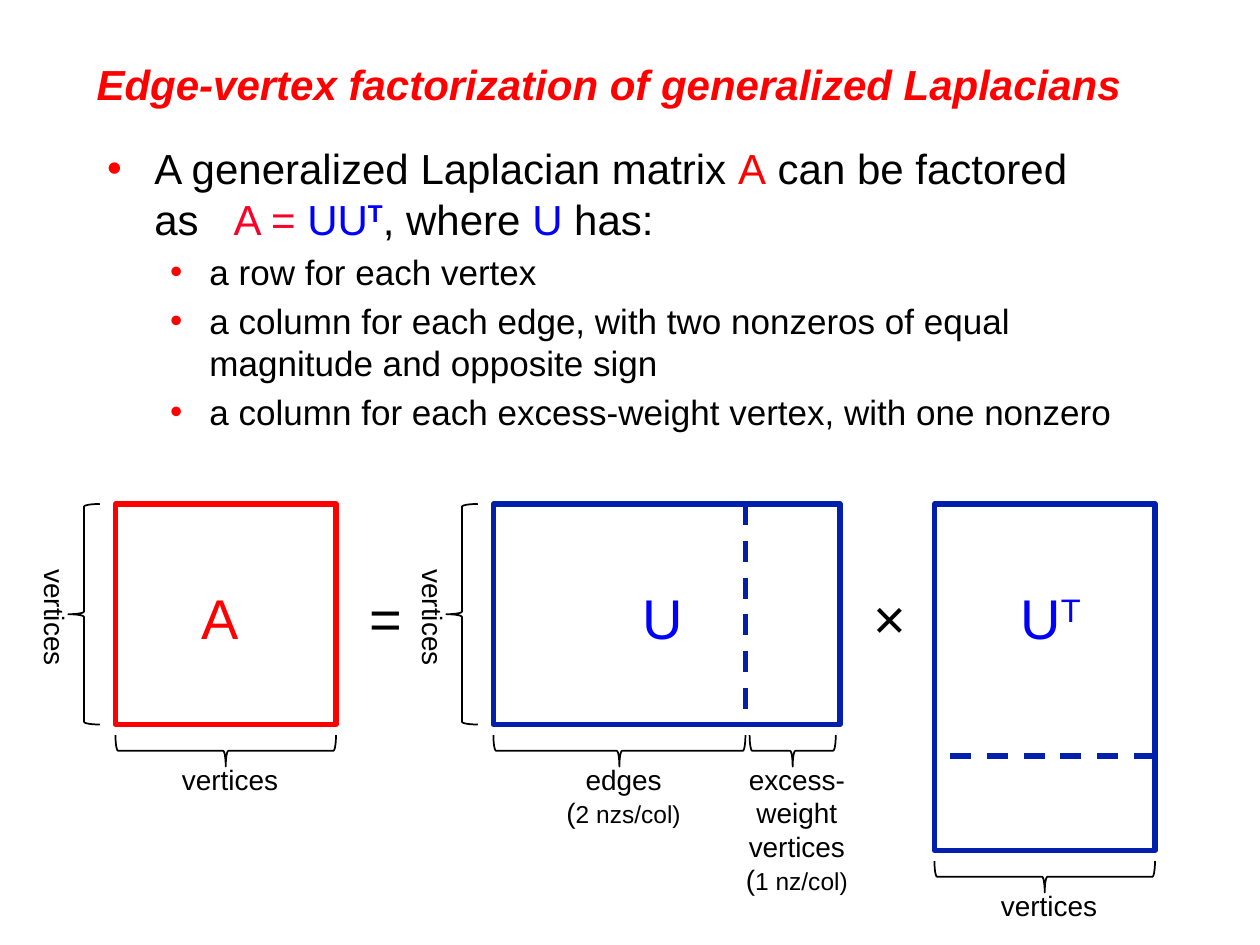
"""Build the slide on edge-vertex factorization of generalized Laplacians."""
from lxml.etree import SubElement
from pptx import Presentation
from pptx.dml.color import RGBColor
from pptx.enum.dml import MSO_LINE
from pptx.enum.shapes import MSO_CONNECTOR, MSO_SHAPE
from pptx.enum.text import MSO_ANCHOR, MSO_AUTO_SIZE, PP_ALIGN
from pptx.oxml.ns import qn
from pptx.util import Inches, Pt

RED = RGBColor(0xFF, 0x00, 0x00)
CRIMSON = RGBColor(0xFC, 0x01, 0x28)
BLUE = RGBColor(0x00, 0x00, 0xFF)
NAVY = RGBColor(0x02, 0x1F, 0xAE)
BLACK = RGBColor(0x00, 0x00, 0x00)

COLUMNS, ROWS = 120, 90
TOP, SIDE = 48, 21
A_LEFT, U_LEFT, UT_LEFT = 11, 47, 89
EDGES, EXCESS = 24, 9


class Slide:
    """Hold the deck style and the current page, measured on a 120 by 90 grid."""

    def __init__(self, deck):
        self.cell_width = deck.slide_width / COLUMNS
        self.cell_height = deck.slide_height / ROWS
        self.page = deck.slides.add_slide(deck.slide_layouts[1])

    def place(self, left, top, width, height):
        return (round(left * self.cell_width), round(top * self.cell_height),
                round(width * self.cell_width), round(height * self.cell_height))

    def group(self):
        return self.page.shapes.add_group_shape().shapes

    def add_spans(self, para, spans, size):
        for words, color, *extra in spans:
            for index, line in enumerate(words.split("\n")):
                if index:
                    para.add_line_break()
                if not line:
                    continue
                span = para.add_run()
                span.text = line
                style = {"name": "Arial", "size": Pt(size), **(extra[0] if extra else {})}
                raised = style.pop("raised", False)
                for name, value in style.items():
                    setattr(span.font, name, value)
                span.font.color.rgb = color
                if raised:
                    span.font._element.set("baseline", "30000")

    def fill_placeholder(self, box, area, anchor):
        box.left, box.top, box.width, box.height = self.place(*area)
        style = {"word_wrap": True, "auto_size": MSO_AUTO_SIZE.NONE, "vertical_anchor": anchor}
        for name, value in style.items():
            setattr(box.text_frame, name, value)
        return box.text_frame

    def title(self, words, area):
        frame = self.fill_placeholder(self.page.shapes.title, area, MSO_ANCHOR.MIDDLE)
        para = frame.paragraphs[0]
        para.alignment = PP_ALIGN.LEFT
        self.add_spans(para, [(words, RED, {"bold": True, "italic": True})], 24)

    def bullets(self, items, area):
        frame = self.fill_placeholder(self.page.placeholders[1], area, MSO_ANCHOR.TOP)
        for index, (level, spans) in enumerate(items):
            para = frame.add_paragraph() if index else frame.paragraphs[0]
            para.level = level
            properties = para._p.get_or_add_pPr()
            SubElement(SubElement(properties, qn("a:buClr")), qn("a:srgbClr"), val=str(RED))
            SubElement(properties, qn("a:buFont"), typeface="Arial")
            SubElement(properties, qn("a:buChar"), char="•")
            self.add_spans(para, spans, 20 if level else 24)

    def outline(self, shapes, kind, area, color, weight, rotation=0):
        shape = shapes.add_shape(kind, *self.place(*area))
        shape.shadow.inherit = False
        shape.fill.background()
        shape.line.color.rgb = color
        shape.line.width = Pt(weight)
        shape.rotation = rotation

    def dashes(self, shapes, start, end):
        ends = self.place(*start, *end)
        line = shapes.add_connector(MSO_CONNECTOR.STRAIGHT, *ends)
        line.line.color.rgb = NAVY
        line.line.width = Pt(3)
        line.line.dash_style = MSO_LINE.DASH
        SubElement(line._element.spPr, qn("a:effectLst"))

    def label(self, shapes, spans, area, size, align=PP_ALIGN.LEFT, rotation=0):
        box = shapes.add_textbox(*self.place(*area))
        box.rotation = rotation
        box.text_frame.word_wrap = False
        box.text_frame.auto_size = MSO_AUTO_SIZE.SHAPE_TO_FIT_TEXT
        para = box.text_frame.paragraphs[0]
        para.alignment = align
        self.add_spans(para, spans, size)

    def brace_below(self, left, bottom, length, spans, width=11.9, height=4.4):
        shapes = self.group()
        middle = left + length / 2
        self.label(shapes, spans, (middle + 0.4 - width / 2, bottom + 3, width, height),
                   16, PP_ALIGN.CENTER)
        self.outline(shapes, MSO_SHAPE.LEFT_BRACE,
                     (middle - 1.5, bottom + 2.5 - length / 2, 3, length), BLACK, 1, 270)

    def brace_left(self, matrix_left, spans, width=11.9, height=4.4):
        shapes = self.group()
        left = matrix_left - 4.5
        self.label(shapes, spans, (left - 1.25 - width / 2, TOP + 11 - height / 2, width, height),
                   16, rotation=90)
        self.outline(shapes, MSO_SHAPE.LEFT_BRACE, (left, TOP, 3, SIDE), BLACK, 1)


def main():
    deck = Presentation()
    deck.slide_width, deck.slide_height = Inches(10), Inches(7.5)
    slide = Slide(deck)
    slide.title("Edge-vertex factorization of generalized Laplacians", (8, 4, 104, 8))
    slide.bullets([
        (0, [("A generalized Laplacian matrix ", BLACK), ("A", RED),
             (" can be factored \nas   ", BLACK), ("A = ", CRIMSON), ("UU", BLUE),
             ("T", BLUE, {"bold": True, "raised": True}), (", where ", BLACK),
             ("U", BLUE), (" has:", BLACK)]),
        (1, [("a row for each vertex", BLACK)]),
        (1, [("a column for each edge, with two nonzeros of equal "
              "magnitude and opposite sign", BLACK)]),
        (1, [("a column for each excess-weight vertex, with one nonzero", BLACK)]),
    ], (9, 13, 104, 27))

    length = EDGES + EXCESS
    bottom = TOP + SIDE
    rectangle = MSO_SHAPE.RECTANGLE
    slide.outline(slide.page.shapes, rectangle, (A_LEFT, TOP, SIDE, SIDE), RED, 3)
    factor = slide.group()
    slide.outline(factor, rectangle, (U_LEFT, TOP, length, SIDE), NAVY, 3)
    slide.dashes(factor, (U_LEFT + EDGES, TOP), (U_LEFT + EDGES, bottom))
    transpose = slide.group()
    shift = (length - SIDE) / 2
    slide.outline(transpose, rectangle, (UT_LEFT - shift, TOP + shift, length, SIDE), NAVY, 3, 90)
    slide.dashes(transpose, (UT_LEFT + SIDE, TOP + EDGES), (UT_LEFT, TOP + EDGES))

    for left, width, spans in [
        (18, 6, [("A", RED)]),
        (60, 6.4, [("U", BLUE)]),
        (96, 8.4, [("U", BLUE), ("T", BLUE, {"raised": True})]),
        (34, 5.5, [("=", BLACK)]),
        (82, 5.5, [("×", BLACK)]),
    ]:
        slide.label(slide.page.shapes, spans, (left, TOP + 7, width, 7.7), 32)

    vertices = [("vertices", BLACK)]
    small = {"size": Pt(14)}
    slide.brace_below(A_LEFT, bottom, SIDE, vertices)
    slide.brace_left(U_LEFT, vertices)
    slide.brace_left(A_LEFT, vertices)
    slide.brace_below(U_LEFT, bottom, EDGES,
                      [("edges\n(", BLACK), ("2 nzs/col)", BLACK, small)], 13.4, 7.7)
    slide.brace_below(U_LEFT + EDGES + 0.4, bottom, EXCESS - 0.8,
                      [("excess-\nweight\nvertices\n(", BLACK), ("1 nz/col)", BLACK, small)],
                      12.2, 14.2)
    slide.brace_below(UT_LEFT, TOP + length, SIDE, vertices)
    deck.save("out.pptx")


if __name__ == "__main__":
    main()
